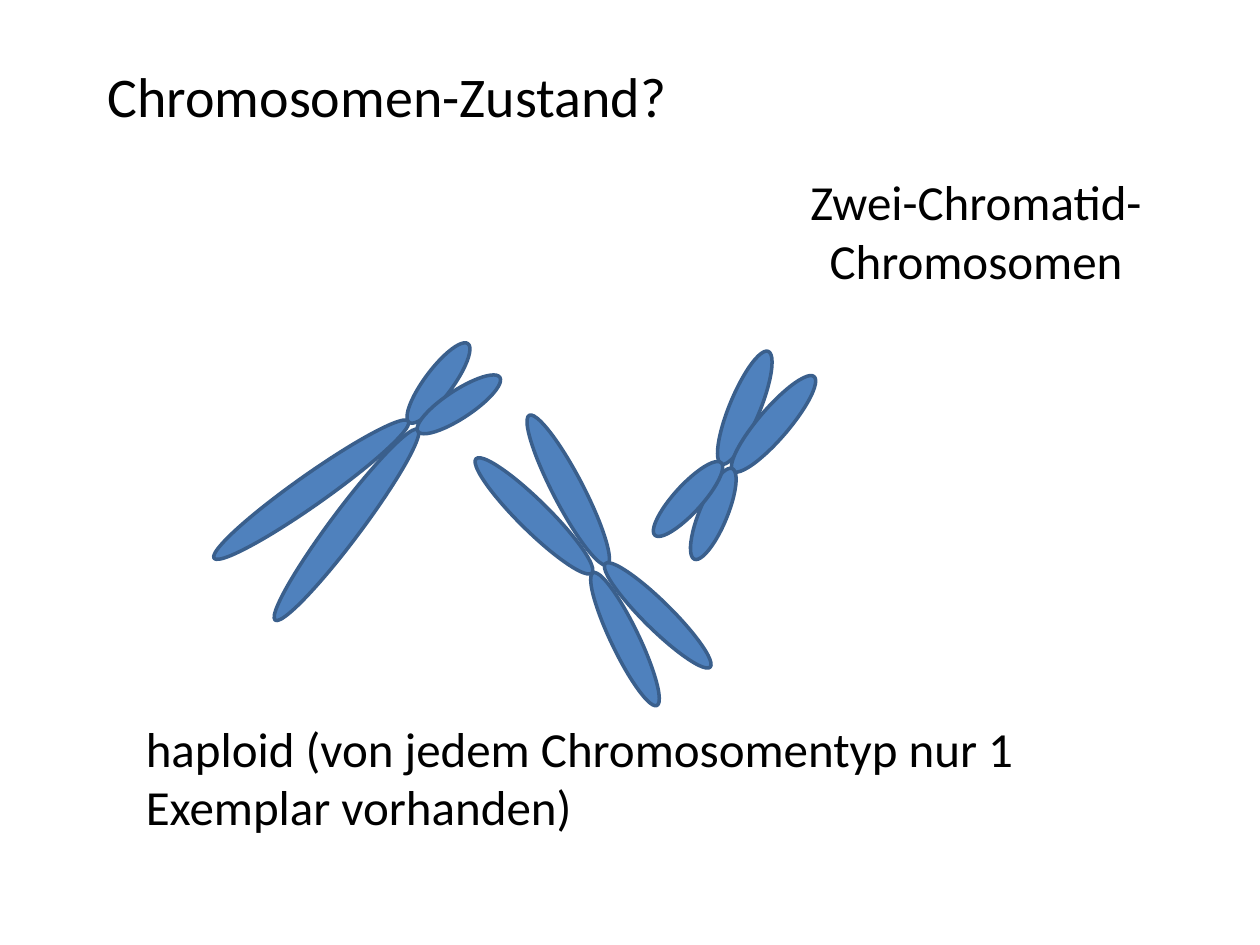
from typing import NamedTuple

from pptx import Presentation
from pptx.dml.color import RGBColor
from pptx.enum.shapes import MSO_SHAPE
from pptx.enum.text import MSO_ANCHOR, MSO_AUTO_SIZE, PP_ALIGN
from pptx.util import Cm, Pt

OVAL = MSO_SHAPE.OVAL
TOP = MSO_ANCHOR.TOP
FIT = MSO_AUTO_SIZE.SHAPE_TO_FIT_TEXT
LEFT, CENTER = PP_ALIGN.LEFT, PP_ALIGN.CENTER

BLUE = RGBColor(0x4F, 0x81, 0xBD)
EDGE = RGBColor(0x3A, 0x5F, 0x8C)
BLACK = RGBColor(0, 0, 0)
FONT = "Calibri"


class Box(NamedTuple):
    """Place and size in centimetres."""
    left: float
    top: float
    width: float
    height: float


class Arm(NamedTuple):
    """One chromatid arm, turned clockwise by some degrees."""
    box: Box
    turn: float


# Each chromosome has two long and two short arms
LARGE = [
    Arm(Box(6.68, 8.18, 0.61, 4.8), 216.8),
    Arm(Box(5.97, 7.47, 0.61, 4.8), 234.8),
    Arm(Box(8.56, 6.73, 0.56, 1.98), 216.8),
    Arm(Box(8.97, 7.16, 0.56, 1.98), 236.6),
]
SMALL = [
    Arm(Box(14.71, 6.99, 0.61, 2.46), 22.6),
    Arm(Box(15.29, 7.29, 0.61, 2.51), 40.6),
    Arm(Box(14.1, 9.37, 0.56, 1.98), 22.6),
    Arm(Box(13.59, 9.07, 0.56, 1.98), 42.4),
]
MIDDLE = [
    Arm(Box(10.46, 8.76, 0.61, 3.28), 314.6),
    Arm(Box(11.15, 8.18, 0.61, 3.4), 332.5),
    Arm(Box(12.98, 10.92, 0.56, 2.97), 314.6),
    Arm(Box(12.32, 11.4, 0.56, 2.97), 334.3),
]


def draw_arm(group, arm: Arm) -> None:
    oval = group.shapes.add_shape(OVAL, *map(Cm, arm.box))
    oval.rotation = arm.turn
    oval.shadow.inherit = False
    oval.fill.solid()
    oval.fill.fore_color.rgb = BLUE
    oval.line.color.rgb = EDGE
    oval.line.width = Pt(2)


def draw_pair(slide, arms: list[Arm]) -> None:
    group = slide.shapes.add_group_shape()
    for arm in arms:
        draw_arm(group, arm)


def put_text(slide, text: str, box: Box, *, size: int = 28,
             align: PP_ALIGN = LEFT, shape=None) -> None:
    """Fill the given shape, or a new text box, with formatted text."""
    place = [Cm(value) for value in box]
    if shape is None:
        shape = slide.shapes.add_textbox(*place)
    shape.left, shape.top, shape.width, shape.height = place
    frame = shape.text_frame
    frame.word_wrap = True
    frame.auto_size = FIT
    frame.vertical_anchor = TOP
    frame.text = text
    para = frame.paragraphs[0]
    para.alignment = align
    font = para.runs[0].font
    font.name = FONT
    font.size = Pt(size)
    font.color.rgb = BLACK


def main() -> None:
    deck = Presentation()
    deck.slide_width, deck.slide_height = Cm(25.4), Cm(19.05)
    slide = deck.slides.add_slide(deck.slide_layouts.get_by_name("Title Only"))

    # Chromosomes
    for arms in (LARGE, SMALL, MIDDLE):
        draw_pair(slide, arms)

    # Title and answers
    put_text(slide, "Chromosomen-Zustand?", Box(1.91, 1.12, 21.01, 1.63),
             size=32, shape=slide.shapes.title)
    put_text(slide, "Zwei-Chromatid-Chromosomen",
             Box(15.37, 3.33, 8.61, 2.64), align=CENTER)
    put_text(slide,
             "haploid (von jedem Chromosomentyp nur 1 Exemplar vorhanden)",
             Box(2.69, 14.35, 18.8, 2.64))

    deck.save("out.pptx")


if __name__ == "__main__":
    main()
